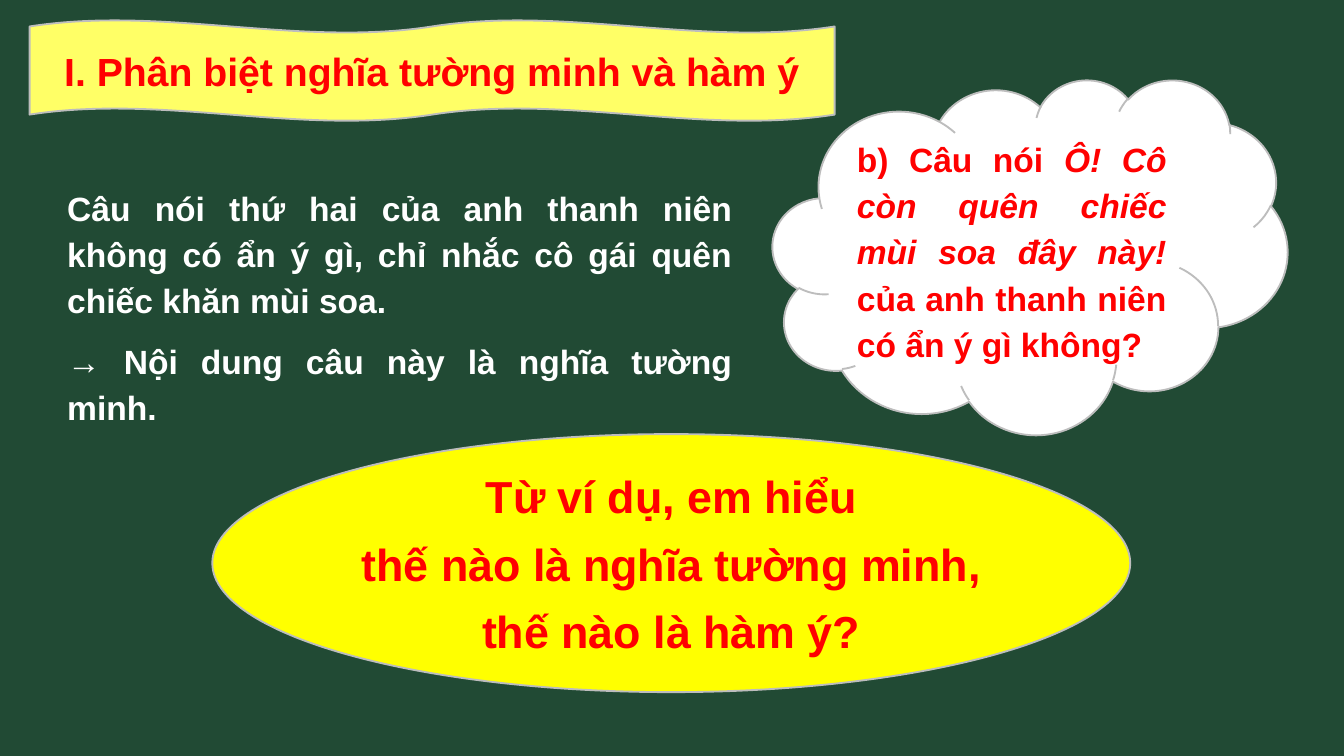
from pptx import Presentation
from pptx.dml.color import RGBColor
from pptx.enum.shapes import MSO_SHAPE
from pptx.enum.text import MSO_ANCHOR, MSO_AUTO_SIZE, PP_ALIGN
from pptx.util import Inches, Pt

COLORS = {
    "board": "214A34",
    "white": "FFFFFF",
    "red": "FF0000",
    "yellow": "FFFF00",
    "banner": "FFFF66",
    "outline": "BDBDBD",
}

TITLE = "I. Phân biệt nghĩa tường minh và hàm ý"
ANSWER = [
    [("Câu nói thứ hai của anh thanh niên không có ẩn ý gì, "
      "chỉ nhắc cô gái quên chiếc khăn mùi soa. ", False)],
    [("→ Nội dung câu này là nghĩa tường minh.", False)],
]
QUESTION = [[
    ("b) Câu nói ", False),
    ("Ô! Cô còn quên chiếc mùi soa đây này! ", True),
    ("của anh thanh niên có ẩn ý gì không?", False),
]]
SUMMARY = [
    [("Từ ví dụ, em hiểu", False)],
    [("thế nào là nghĩa tường minh,", False)],
    [("thế nào là hàm ý?", False)],
]

BANNER_BOX = (0.22, 0.15, 5.99, 0.75)
ANSWER_BOX = (0.42, 1.31, 5.11, 1.58)
CLOUD_BOX = (5.75, 0.59, 3.83, 2.64)
ELLIPSE_BOX = (1.58, 3.23, 6.83, 1.92)


def color(name):
    return RGBColor.from_string(COLORS[name])


def lengths(box):
    return [Inches(value) for value in box]


def add_filled_shape(slide, kind, box, fill):
    shape = slide.shapes.add_shape(kind, *lengths(box))
    shape.shadow.inherit = False
    shape.fill.solid()
    shape.fill.fore_color.rgb = color(fill)
    shape.line.color.rgb = color("outline")
    shape.line.width = Pt(1)
    return shape


def write(shape, content, size, ink, align, line_spacing=1.0, space_after=7.5):
    frame = shape.text_frame
    frame.word_wrap = True
    for index, runs in enumerate(content):
        paragraph = frame.paragraphs[0] if index == 0 else frame.add_paragraph()
        paragraph.alignment = align
        paragraph.line_spacing = line_spacing
        paragraph.space_before = Pt(0)
        paragraph.space_after = Pt(space_after)
        paragraph.font.name = "Arial"
        paragraph.font.size = Pt(size)
        paragraph.font.bold = True
        paragraph.font.color.rgb = color(ink)
        for text, italic in runs:
            run = paragraph.add_run()
            run.text = text
            if italic:
                run.font.italic = True


presentation = Presentation()
presentation.slide_width = Inches(10)
presentation.slide_height = presentation.slide_width * 9 // 16
slide = presentation.slides.add_slide(presentation.slide_layouts[5])
slide.background.fill.solid()
slide.background.fill.fore_color.rgb = color("board")

answer = slide.shapes.add_textbox(*lengths(ANSWER_BOX))
write(answer, ANSWER, 18, "white", PP_ALIGN.JUSTIFY, 1.15)
frame = answer.text_frame
frame.auto_size = MSO_AUTO_SIZE.SHAPE_TO_FIT_TEXT
frame.margin_left = frame.margin_right = Inches(0.08)
frame.margin_top = frame.margin_bottom = Inches(0.04)

cloud = add_filled_shape(slide, MSO_SHAPE.CLOUD, CLOUD_BOX, "white")
write(cloud, QUESTION, 18, "red", PP_ALIGN.JUSTIFY, 1.15)

ellipse = add_filled_shape(slide, MSO_SHAPE.OVAL, ELLIPSE_BOX, "yellow")
write(ellipse, SUMMARY, 24, "red", PP_ALIGN.CENTER)

banner = add_filled_shape(slide, MSO_SHAPE.DOUBLE_WAVE, BANNER_BOX, "banner")

title = slide.shapes.title
title.left, title.top, title.width, title.height = lengths(BANNER_BOX)
write(title, [[(TITLE, False)]], 21, "red", PP_ALIGN.CENTER, space_after=0)
title.text_frame.vertical_anchor = MSO_ANCHOR.MIDDLE
title.text_frame.auto_size = MSO_AUTO_SIZE.NONE
banner.element.addnext(title.element)

presentation.save("out.pptx")
